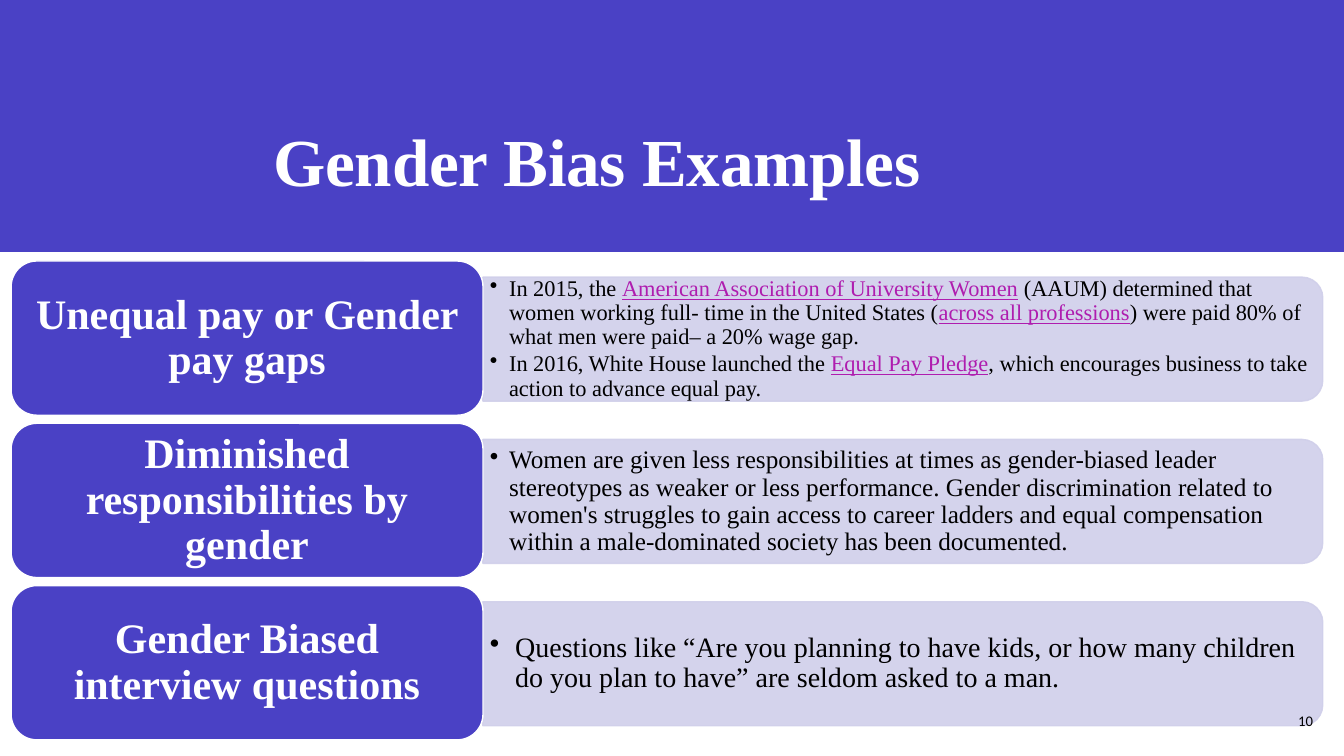
from lxml import etree
from pptx import Presentation
from pptx import util as u
from pptx.dml.color import RGBColor
from pptx.enum import shapes, text
from pptx.oxml import ns

COLORS = {
    "violet": "4A41C5",
    "lavender": "D0CFEA",
    "white": "FFFFFF",
    "black": "000000",
    "link": "AF1DAF",
}
SERIF = "Times New Roman"

# Each row: label, text size, hanging indent in inches, paragraphs.
# A paragraph alternates plain and linked passages, starting with plain.
ROWS = [
    ("Unequal pay or Gender pay gaps", 16, 0.19, [
        ["In 2015, the ", "American Association of University Women",
         " (AAUM) determined that women working full- time in the United States (",
         "across all professions",
         ") were paid 80% of what men were paid– a 20% wage gap."],
        ["In 2016, White House launched the ", "Equal Pay Pledge",
         ", which encourages business to take action to advance equal pay."],
    ]),
    ("Diminished responsibilities by gender", 18, 0.19, [
        ["Women are given less responsibilities at times as gender-biased leader "
         "stereotypes as weaker or less performance. Gender discrimination related to "
         "women's struggles to gain access to career ladders and equal compensation "
         "within a male-dominated society has been documented."],
    ]),
    ("Gender Biased interview questions", 20, 0.25, [
        ["Questions like “Are you planning to have kids, or how many children "
         "do you plan to have” are seldom asked to a man."],
    ]),
]
FIRST_ROW_TOP, ROW_PITCH = 34.53, 21.47


class SlideBuilder:
    """Draws on one slide; boxes are (left, top, width, height) in percent of its size."""

    def __init__(self, presentation):
        self.width = presentation.slide_width
        self.height = presentation.slide_height
        self.slide = presentation.slides.add_slide(presentation.slide_layouts[5])

    def place(self, box):
        left, top, width, height = box
        return [u.Emu(round(share * side / 100)) for share, side in
                ((left, self.width), (top, self.height),
                 (width, self.width), (height, self.height))]

    def style_shape(self, shape, fill, line=None, opacity=None):
        shape.shadow.inherit = False
        shape.fill.solid()
        shape.fill.fore_color.rgb = RGBColor.from_string(COLORS[fill])
        if line:
            shape.line.color.rgb = RGBColor.from_string(COLORS[line])
            shape.line.width = u.Pt(1)
        else:
            shape.line.fill.background()
        if opacity:
            for color in shape._element.spPr.iter(ns.qn("a:srgbClr")):
                etree.SubElement(color, ns.qn("a:alpha"), val=str(opacity * 1000))

    def style_frame(self, frame, margin_x, margin_y, anchor=text.MSO_ANCHOR.MIDDLE):
        frame.word_wrap = True
        frame.auto_size = text.MSO_AUTO_SIZE.NONE
        frame.vertical_anchor = anchor
        frame.margin_left = frame.margin_right = u.Inches(margin_x)
        frame.margin_top = frame.margin_bottom = u.Inches(margin_y)

    def add_run(self, paragraph, words, size, color, bold=False, font=SERIF, underline=False):
        run = paragraph.add_run()
        run.text = words
        run.font.name = font
        run.font.size = u.Pt(size)
        run.font.bold = bold
        run.font.underline = underline
        run.font.color.rgb = RGBColor.from_string(COLORS[color])
        return run

    def band(self, box):
        """Add a plain rectangle behind everything else."""
        shape = self.slide.shapes.add_shape(shapes.MSO_SHAPE.RECTANGLE, *self.place(box))
        self.style_shape(shape, "violet")
        self.slide.shapes._spTree.insert(2, shape._element)

    def title(self, box, words):
        shape = self.slide.shapes.title
        shape.left, shape.top, shape.width, shape.height = self.place(box)
        self.style_frame(shape.text_frame, 0.1, 0.05, text.MSO_ANCHOR.BOTTOM)
        paragraph = shape.text_frame.paragraphs[0]
        paragraph.alignment = text.PP_ALIGN.CENTER
        paragraph.line_spacing = 0.9
        run = self.add_run(paragraph, words, 48, "white", bold=True)
        run.font._element.set("spc", "-20")

    def panel(self, box):
        """Add a box rounded on its right side: a top-rounded one turned by 90 degrees."""
        left, top, width, height = self.place(box)
        shape = self.slide.shapes.add_shape(
            shapes.MSO_SHAPE.ROUND_2_SAME_RECTANGLE,
            left + (width - height) // 2, top + (height - width) // 2, height, width)
        shape.rotation = 90
        self.style_shape(shape, "lavender", "lavender", opacity=90)

    def label(self, box, words):
        shape = self.slide.shapes.add_shape(
            shapes.MSO_SHAPE.ROUNDED_RECTANGLE, *self.place(box))
        self.style_shape(shape, "violet", "white")
        self.style_frame(shape.text_frame, 0.12, 0.06)
        paragraph = shape.text_frame.paragraphs[0]
        paragraph.alignment = text.PP_ALIGN.CENTER
        paragraph.line_spacing = 0.9
        self.add_run(paragraph, words, 30, "white", bold=True)

    def bullets(self, box, paragraphs, size, indent):
        frame = self.slide.shapes.add_textbox(*self.place(box)).text_frame
        self.style_frame(frame, 0.07, 0.04)
        for index, passages in enumerate(paragraphs):
            paragraph = frame.add_paragraph() if index else frame.paragraphs[0]
            paragraph.line_spacing = 0.9
            paragraph.space_after = u.Pt(2)
            properties = paragraph._p.get_or_add_pPr()
            properties.set("marL", str(u.Inches(indent)))
            properties.set("indent", str(-u.Inches(indent)))
            etree.SubElement(properties, ns.qn("a:buChar"), char="•")
            for position, words in enumerate(passages):
                linked = position % 2 == 1
                self.add_run(paragraph, words, size, "link" if linked else "black",
                             underline=linked)

    def page_number(self, box, number):
        frame = self.slide.shapes.add_textbox(*self.place(box)).text_frame
        self.style_frame(frame, 0.1, 0.05)
        paragraph = frame.paragraphs[0]
        paragraph.alignment = text.PP_ALIGN.RIGHT
        self.add_run(paragraph, number, 10.5, "black", font="Calibri")


def main():
    presentation = Presentation()
    presentation.slide_width = u.Inches(13.33)
    presentation.slide_height = u.Inches(7.5)
    builder = SlideBuilder(presentation)
    builder.band((0, 0, 100, 33.33))
    builder.title((5.33, 5.33, 78.17, 21.87), "Gender Bias Examples")
    for index, (label, size, indent, paragraphs) in enumerate(ROWS):
        top = FIRST_ROW_TOP + index * ROW_PITCH
        builder.panel((35.93, top + 2.13, 62.49, 16.4))
        builder.bullets((35.93, top + 2.93, 62.04, 14.8), paragraphs, size, indent)
        builder.label((0.83, top, 35.11, 20.4), label)
    builder.page_number((93.25, 92.67, 5.18, 5.33), "10")
    presentation.save("out.pptx")


if __name__ == "__main__":
    main()
